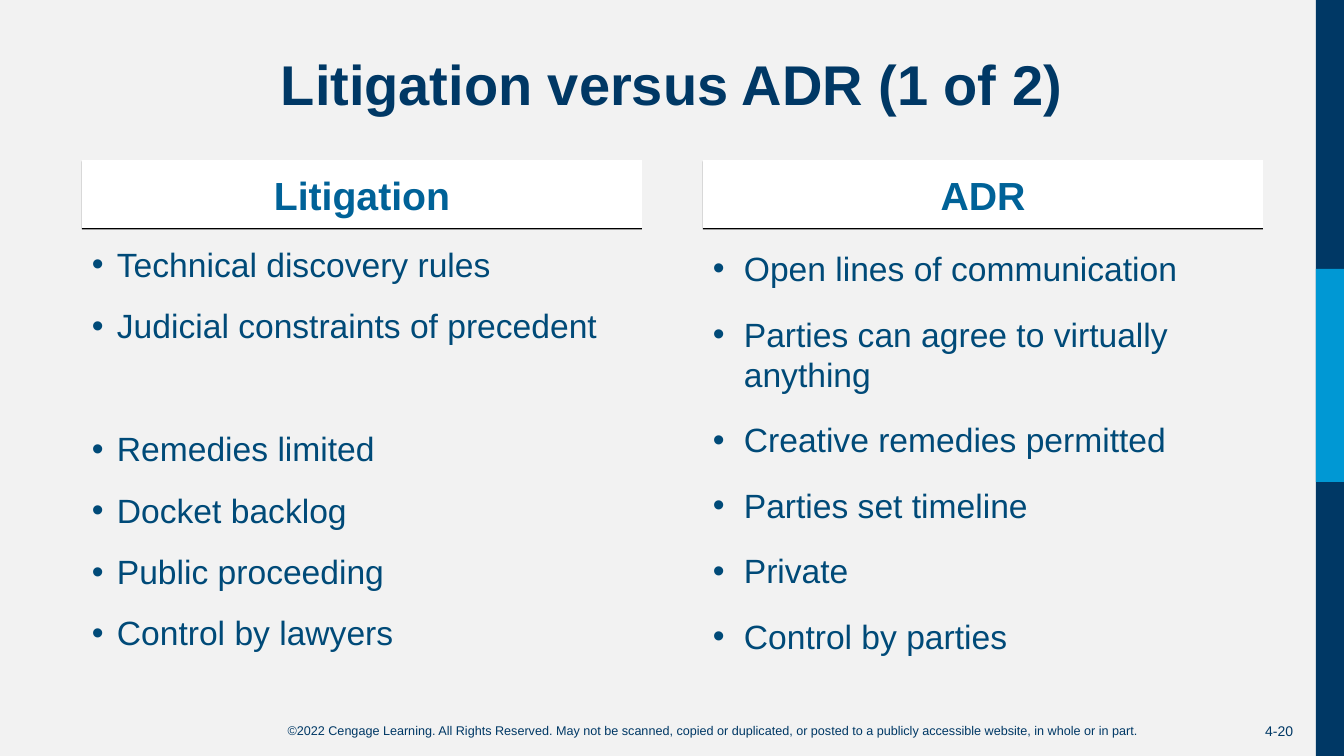
from lxml.etree import SubElement
from pptx import Presentation
from pptx.dml.color import RGBColor
from pptx.enum.shapes import MSO_SHAPE
from pptx.enum.text import MSO_ANCHOR, PP_ALIGN
from pptx.oxml.ns import qn
from pptx.util import Emu, Pt

NAVY = RGBColor(0x00, 0x38, 0x65)
SKY = RGBColor(0x00, 0x98, 0xD4)
HEADING_BLUE = RGBColor(0x00, 0x62, 0x98)
BODY_BLUE = RGBColor(0x00, 0x4A, 0x78)
WHITE = RGBColor(0xFF, 0xFF, 0xFF)
PALE_GREY = RGBColor(0xF2, 0xF2, 0xF2)

FONT = "Arial"
EMU_PER_PX = 914400 / 100.8
TITLE_ONLY = 5


def px(length):
    return Emu(round(length * EMU_PER_PX))


class ComparisonSlide:
    def __init__(self, deck):
        self.slide = deck.slides.add_slide(deck.slide_layouts[TITLE_ONLY])
        background = self.slide.background.fill
        background.solid()
        background.fore_color.rgb = PALE_GREY

    def add_text(self, paragraph, text, size, color, bold=False):
        run = paragraph.add_run()
        run.text = text
        font = run.font
        font.name, font.size, font.bold = FONT, Pt(size), bold
        font.color.rgb = color

    def title(self, text, box):
        title = self.slide.shapes.title
        title.left, title.top, title.width, title.height = map(px, box)
        title.text_frame.vertical_anchor = MSO_ANCHOR.TOP
        paragraph = title.text_frame.paragraphs[0]
        paragraph.alignment = PP_ALIGN.CENTER
        paragraph.line_spacing = 0.9
        self.add_text(paragraph, text, 40, NAVY, bold=True)

    def block(self, box, color):
        block = self.slide.shapes.add_shape(MSO_SHAPE.RECTANGLE, *map(px, box))
        block.shadow.inherit = False
        block.fill.solid()
        block.fill.fore_color.rgb = color
        block.line.fill.background()
        return block

    def heading(self, text, box):
        card = self.block(box, WHITE)
        # Thin dark edge under the card
        effects = card.element.spPr.find(qn("a:effectLst"))
        shadow = SubElement(effects, qn("a:outerShdw"), dist=str(int(Pt(1))),
                            dir="5400000", algn="t", rotWithShape="0")
        SubElement(shadow, qn("a:srgbClr"), val="000000")
        frame = card.text_frame
        frame.vertical_anchor = MSO_ANCHOR.BOTTOM
        frame.margin_top = frame.margin_bottom = px(10)
        paragraph = frame.paragraphs[0]
        paragraph.alignment = PP_ALIGN.CENTER
        paragraph.space_after = Pt(8)
        self.add_text(paragraph, text, 28, HEADING_BLUE, bold=True)

    def text_frame(self, box):
        frame = self.slide.shapes.add_textbox(*map(px, box)).text_frame
        frame.word_wrap = True
        return frame

    def label(self, text, box, size, align, anchor=MSO_ANCHOR.TOP):
        frame = self.text_frame(box)
        frame.vertical_anchor = anchor
        frame.paragraphs[0].alignment = align
        self.add_text(frame.paragraphs[0], text, size, NAVY)

    def bullets(self, items, box, indent, line_spacing, gaps):
        frame = self.text_frame(box)
        for index, item in enumerate(items):
            paragraph = frame.add_paragraph() if index else frame.paragraphs[0]
            properties = paragraph._p.get_or_add_pPr()
            properties.set("marL", str(int(px(indent))))
            properties.set("indent", str(-int(px(indent))))
            bullet_color = SubElement(properties, qn("a:buClr"))
            SubElement(bullet_color, qn("a:srgbClr"), val=str(BODY_BLUE))
            SubElement(properties, qn("a:buFont"), typeface=FONT)
            SubElement(properties, qn("a:buChar"), char="•")
            paragraph.line_spacing = line_spacing
            paragraph.space_before = Pt(gaps.get(item, 10) if index else 0)
            paragraph.space_after = Pt(8)
            self.add_text(paragraph, item, 24, BODY_BLUE)


def main():
    deck = Presentation()
    deck.slide_width, deck.slide_height = px(1344), px(756)
    comparison = ComparisonSlide(deck)

    # Side band, footer and page number
    comparison.label(
        "©2022 Cengage Learning. All Rights Reserved. May not be scanned, copied or "
        "duplicated, or posted to a publicly accessible website, in whole or in part.",
        (183, 718, 1059, 25), 9, PP_ALIGN.CENTER)
    comparison.block((1316, 0, 28, 756), NAVY)
    comparison.block((1316, 269, 28, 213), SKY)
    comparison.label("4-20", (1222, 711, 81, 40), 10, PP_ALIGN.RIGHT, MSO_ANCHOR.MIDDLE)

    comparison.title("Litigation versus ADR (1 of 2)", (52, 52, 1239, 134))

    # Two columns: heading, points, indent, line spacing, wider gaps
    columns = [
        ("Litigation",
         ["Technical discovery rules", "Judicial constraints of precedent",
          "Remedies limited", "Docket backlog", "Public proceeding",
          "Control by lawyers"],
         25, 0.9, {"Remedies limited": 54}),
        ("ADR",
         ["Open lines of communication", "Parties can agree to virtually anything",
          "Creative remedies permitted", "Parties set timeline", "Private",
          "Control by parties"],
         31, 1.0, {}),
    ]
    for number, (heading, points, indent, line_spacing, gaps) in enumerate(columns):
        left = 82 + 621 * number
        comparison.heading(heading, (left, 160, 560, 68))
        comparison.bullets(points, (left, 243, 560, 435), indent, line_spacing, gaps)

    deck.save("out.pptx")


if __name__ == "__main__":
    main()
